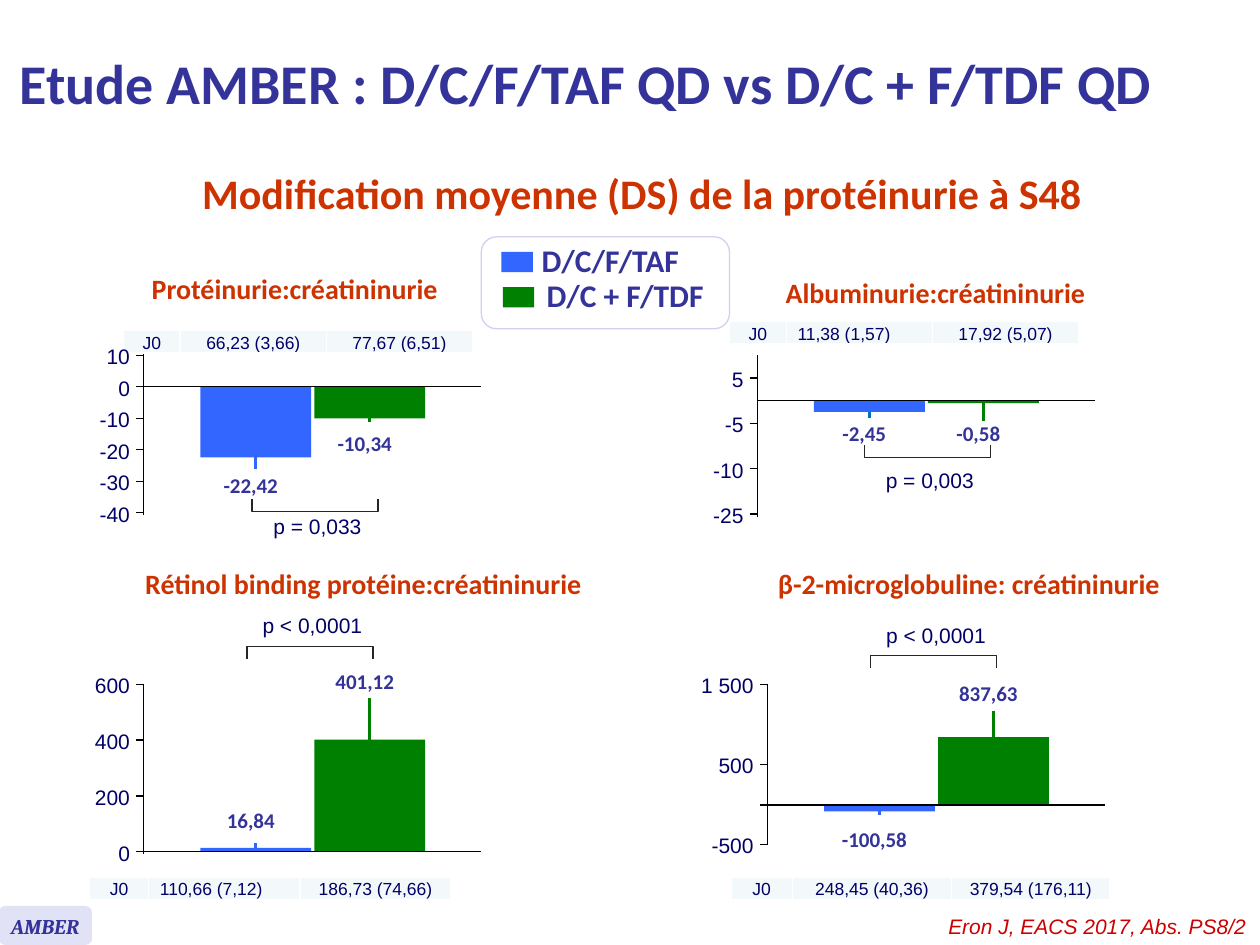
from dataclasses import dataclass
from typing import NamedTuple

from lxml.etree import SubElement
from pptx import Presentation
from pptx.dml.color import RGBColor
from pptx.enum.shapes import MSO_CONNECTOR, MSO_SHAPE
from pptx.enum.text import MSO_ANCHOR, PP_ALIGN
from pptx.oxml.ns import qn
from pptx.util import Inches, Pt

SLIDE_WIDTH, SLIDE_HEIGHT = Inches(10), Inches(7.5)
COLUMNS, ROWS = 100, 75
BAR_WIDTH, BAR_OFFSETS = 8.8, (4.5, 13.55)
BASELINE_LENGTH, TICK_LENGTH = 26.8, 0.6
BRACKET_SPAN, BRACKET_DEPTH = 10, 1


@dataclass(frozen=True)
class Theme:
    heading: str = "Calibri"
    body: str = "Arial"
    badge: str = "Cambria"
    indigo: str = "333399"
    navy: str = "000066"
    rust: str = "CC3300"
    red: str = "CC0000"
    taf: str = "3366FF"
    tdf: str = "008000"
    axis: str = "000000"
    bracket: str = "262626"
    white: str = "FFFFFF"
    legend_edge: str = "D0D0F0"
    badge_fill: str = "E2E2F6"
    cell: str = "F3F9FA"
    title_size: float = 32
    subtitle_size: float = 24
    legend_size: float = 18
    panel_size: float = 16
    label_size: float = 12
    cell_size: float = 10
    thin: float = 0.75
    whisker: float = 1.63


THEME = Theme()


class Box(NamedTuple):
    col: float
    row: float
    width: float
    height: float


class Bar(NamedTuple):
    label: str
    end: float
    whisker_end: float
    label_row: float
    whisker_color: str


class Baseline(NamedTuple):
    col: float
    row: float
    widths: tuple
    values: tuple
    first_left: bool = False


@dataclass(frozen=True)
class Panel:
    title: str
    title_box: Box
    axis: float
    top: float
    bottom: float
    zero: float
    ticks: tuple
    first_tick: float
    last_tick: float
    bars: tuple
    p_value: str
    p_row: float
    bracket_col: float
    bracket_row: float
    opens_up: bool
    baseline: Baseline
    zero_tick: bool = False


PANELS = (
    Panel("Protéinurie:créatininurie", Box(8.6, 21.5, 29.6, 3.1), 11.4, 28.1, 40.9, 30.7,
          ("10", "0", "-10", "-20", "-30", "-40"), 28.2, 40.7,
          (Bar("-22,42", 36.3, 37.2, 38.5, THEME.taf), Bar("-10,34", 33.2, 33.5, 35.2, THEME.tdf)),
          "p = 0,033", 41.9, 25, 40.1, True,
          Baseline(9.8, 26.2, (4.5, 11.6, 11.6), ("66,23 (3,66)", "77,67 (6,51)"))),
    Panel("Albuminurie:créatininurie", Box(58.4, 21.8, 31.7, 3.1), 60.1, 28.2, 41, 31.8,
          ("5", "-5", "-10", "-25"), 30, 40.8,
          (Bar("-2,45", 32.7, 33.2, 34.4, "0070C0"), Bar("-0,58", 32, 33.4, 34.4, THEME.tdf)),
          "p = 0,003", 38.2, 73.6, 35.8, True,
          Baseline(57.9, 25.5, (4.5, 11.6, 11.6), ("11,38 (1,57)", "17,92 (5,07)"), True)),
    Panel("Rétinol binding protéine:créatininurie", Box(6.2, 44.7, 45.3, 3.6), 11.4, 54.3, 67.8, 67.6,
          ("600", "400", "200", "0"), 54.3, 67.6,
          (Bar("16,84", 67.3, 66.9, 65.1, THEME.taf), Bar("401,12", 58.7, 55.4, 54.1, THEME.tdf)),
          "p < 0,0001", 49.7, 24.6, 51.8, False,
          Baseline(7.1, 69.6, (4.7, 12, 12), ("110,66 (7,12)", "186,73 (74,66)"), True)),
    Panel("β-2-microglobuline: créatininurie", Box(58.4, 44.7, 37, 3.6), 60.9, 54.3, 67.1, 63.9,
          ("1 500", "500", "-500"), 54.3, 67,
          (Bar("-100,58", 64.4, 64.7, 66.6, THEME.taf), Bar("837,63", 58.5, 56.4, 55, THEME.tdf)),
          "p < 0,0001", 50.5, 74.1, 52.5, False,
          Baseline(58, 69.6, (4.9, 12.6, 12.6), ("248,45 (40,36)", "379,54 (176,11)")), True),
)


def across(columns: float) -> int:
    return round(SLIDE_WIDTH * columns / COLUMNS)


def down(rows: float) -> int:
    return round(SLIDE_HEIGHT * rows / ROWS)


def place(box: Box) -> tuple:
    return across(box.col), down(box.row), across(box.width), down(box.height)


def write(frame, text: str, *, size=THEME.label_size, color=THEME.navy, font=THEME.body, bold=False,
          italic=False, align=PP_ALIGN.LEFT, spacing=1.0) -> None:
    paragraph = frame.paragraphs[0]
    paragraph.alignment, paragraph.line_spacing = align, spacing
    run = paragraph.add_run()
    run.text = text
    run.font.name, run.font.size = font, Pt(size)
    run.font.bold, run.font.italic = bold, italic
    run.font.color.rgb = RGBColor.from_string(color)


def add_text(slide, text: str, box: Box, *, inset=1.0, wrap=True, **style) -> None:
    frame = slide.shapes.add_textbox(*place(box)).text_frame
    frame.word_wrap, frame.vertical_anchor = wrap, MSO_ANCHOR.MIDDLE
    frame.margin_left = frame.margin_right = across(inset)
    frame.margin_top = frame.margin_bottom = down(inset / 2)
    write(frame, text, **style)


def add_block(slide, preset, box: Box, fill=None, edge=None):
    block = slide.shapes.add_shape(preset, *place(box))
    block.shadow.inherit = False
    if fill:
        block.fill.solid()
        block.fill.fore_color.rgb = RGBColor.from_string(fill)
    else:
        block.fill.background()
    if edge:
        block.line.color.rgb = RGBColor.from_string(edge)
        block.line.width = Pt(THEME.thin)
    else:
        block.line.fill.background()
    return block


def add_line(slide, start: tuple, end: tuple, color=THEME.axis, weight=THEME.thin):
    line = slide.shapes.add_connector(MSO_CONNECTOR.STRAIGHT, across(start[0]), down(start[1]),
                                      across(end[0]), down(end[1]))
    line.line.color.rgb = RGBColor.from_string(color)
    line.line.width = Pt(weight)
    SubElement(line._element.spPr, qn("a:effectLst"))
    return line


def add_bar(slide, panel: Panel, bar: Bar, offset: float, color: str) -> None:
    left, center = panel.axis + offset, panel.axis + offset + BAR_WIDTH / 2
    top, bottom = sorted((bar.end, panel.zero))
    column = add_block(slide, MSO_SHAPE.RECTANGLE, Box(left, top, BAR_WIDTH, bottom - top), color)
    whisker = add_line(slide, (center, bar.end), (center, bar.whisker_end), bar.whisker_color, THEME.whisker)
    whisker.begin_connect(column, 0 if bar.whisker_end < bar.end else 2)
    add_text(slide, bar.label, Box(center - 4.4, bar.label_row - 1.5, 8, 3), wrap=False,
             font=THEME.heading, color=THEME.indigo, bold=True, align=PP_ALIGN.CENTER)


def add_axes(slide, panel: Panel) -> None:
    tick_start = panel.axis - TICK_LENGTH
    add_line(slide, (panel.axis, panel.top), (panel.axis, panel.bottom))
    baseline_start = tick_start if panel.zero_tick else panel.axis
    add_line(slide, (baseline_start, panel.zero), (panel.axis + BASELINE_LENGTH, panel.zero))
    step = (panel.last_tick - panel.first_tick) / (len(panel.ticks) - 1)
    for index, label in enumerate(panel.ticks):
        row = panel.first_tick + index * step
        add_line(slide, (tick_start, row), (panel.axis, row))
        add_text(slide, label, Box(panel.axis - 7.1, row - 1.4, 7, 3), wrap=False, align=PP_ALIGN.RIGHT)


def add_comparison(slide, panel: Panel) -> None:
    bracket = add_block(slide, MSO_SHAPE.RIGHT_BRACKET,
                        Box(panel.bracket_col - BRACKET_DEPTH / 2, panel.bracket_row - BRACKET_SPAN / 2,
                            BRACKET_DEPTH, BRACKET_SPAN), edge=THEME.bracket)
    bracket.adjustments[0] = 0
    bracket.rotation = 90 if panel.opens_up else 270
    add_text(slide, panel.p_value, Box(panel.bracket_col - 5.5, panel.p_row - 1.6, 11.4, 3.2), inset=0,
             align=PP_ALIGN.CENTER, spacing=0.9)


def add_baseline(slide, baseline: Baseline) -> None:
    box = Box(baseline.col, baseline.row, sum(baseline.widths), 1.8)
    table = slide.shapes.add_table(1, len(baseline.widths), *place(box)).table
    table.first_row = table.horz_banding = False
    table.rows[0].height = down(box.height)
    for index, (width, value) in enumerate(zip(baseline.widths, ("J0", *baseline.values))):
        table.columns[index].width = across(width)
        cell = table.cell(0, index)
        left_aligned = baseline.first_left and index == 1
        cell.margin_left, cell.margin_right = across(0.9 if left_aligned else 0.5), across(0.5)
        cell.margin_top = cell.margin_bottom = 0
        cell.vertical_anchor = MSO_ANCHOR.BOTTOM
        write(cell.text_frame, value, size=THEME.cell_size, spacing=1.07,
              align=PP_ALIGN.LEFT if left_aligned else PP_ALIGN.CENTER)
        properties = cell._tc.get_or_add_tcPr()
        for side in ("a:lnL", "a:lnR", "a:lnT", "a:lnB"):
            border = SubElement(properties, qn(side), w=str(Pt(1)))
            SubElement(SubElement(border, qn("a:solidFill")), qn("a:srgbClr"), val=THEME.white)
        cell.fill.solid()
        cell.fill.fore_color.rgb = RGBColor.from_string(THEME.cell)


def add_panel(slide, panel: Panel) -> None:
    add_text(slide, panel.title, panel.title_box, inset=0, size=THEME.panel_size, font=THEME.heading,
             color=THEME.rust, bold=True, align=PP_ALIGN.CENTER, spacing=0.9)
    add_baseline(slide, panel.baseline)
    add_comparison(slide, panel)
    for bar, offset, color in zip(panel.bars, BAR_OFFSETS, (THEME.taf, THEME.tdf)):
        add_bar(slide, panel, bar, offset, color)
    add_axes(slide, panel)


def add_legend(slide) -> None:
    add_block(slide, MSO_SHAPE.ROUNDED_RECTANGLE, Box(38.2, 18.8, 19.7, 7.3), THEME.white, THEME.legend_edge)
    entries = (("D/C/F/TAF", THEME.taf, 39.8, 20, 42), ("D/C + F/TDF", THEME.tdf, 39.9, 22.8, 42.4))
    for label, color, key_col, key_row, label_col in entries:
        add_block(slide, MSO_SHAPE.RECTANGLE, Box(key_col, key_row, 2.5, 1.6), color)
        add_text(slide, label, Box(label_col, key_row - 1.4, 14.7, 4), wrap=False, size=THEME.legend_size,
                 font=THEME.heading, color=THEME.indigo, bold=True)


def main() -> None:
    deck = Presentation()
    deck.slide_width, deck.slide_height = SLIDE_WIDTH, SLIDE_HEIGHT
    slide = deck.slides.add_slide(deck.slide_layouts[6])
    add_text(slide, "Etude AMBER : D/C/F/TAF QD vs D/C + F/TDF QD", Box(0.6, 0.5, 95.5, 12.1),
             size=THEME.title_size, font=THEME.heading, color=THEME.indigo, bold=True)
    add_text(slide, "Modification moyenne (DS) de la protéinurie à S48", Box(14.1, 12.8, 73.7, 5),
             size=THEME.subtitle_size, font=THEME.heading, color=THEME.rust, bold=True, align=PP_ALIGN.CENTER)
    add_legend(slide)
    for panel in PANELS:
        add_panel(slide, panel)
    add_block(slide, MSO_SHAPE.ROUNDED_RECTANGLE, Box(-0.1, 71.9, 7.4, 3.1), THEME.badge_fill)
    add_text(slide, "AMBER", Box(-0.1, 72, 7.5, 3), wrap=False, font=THEME.badge, color=THEME.indigo,
             bold=True, italic=True)
    add_text(slide, "Eron J, EACS 2017, Abs. PS8/2", Box(58.3, 72, 41.6, 3), color=THEME.red, italic=True,
             align=PP_ALIGN.RIGHT)
    deck.save("out.pptx")


if __name__ == "__main__":
    main()
